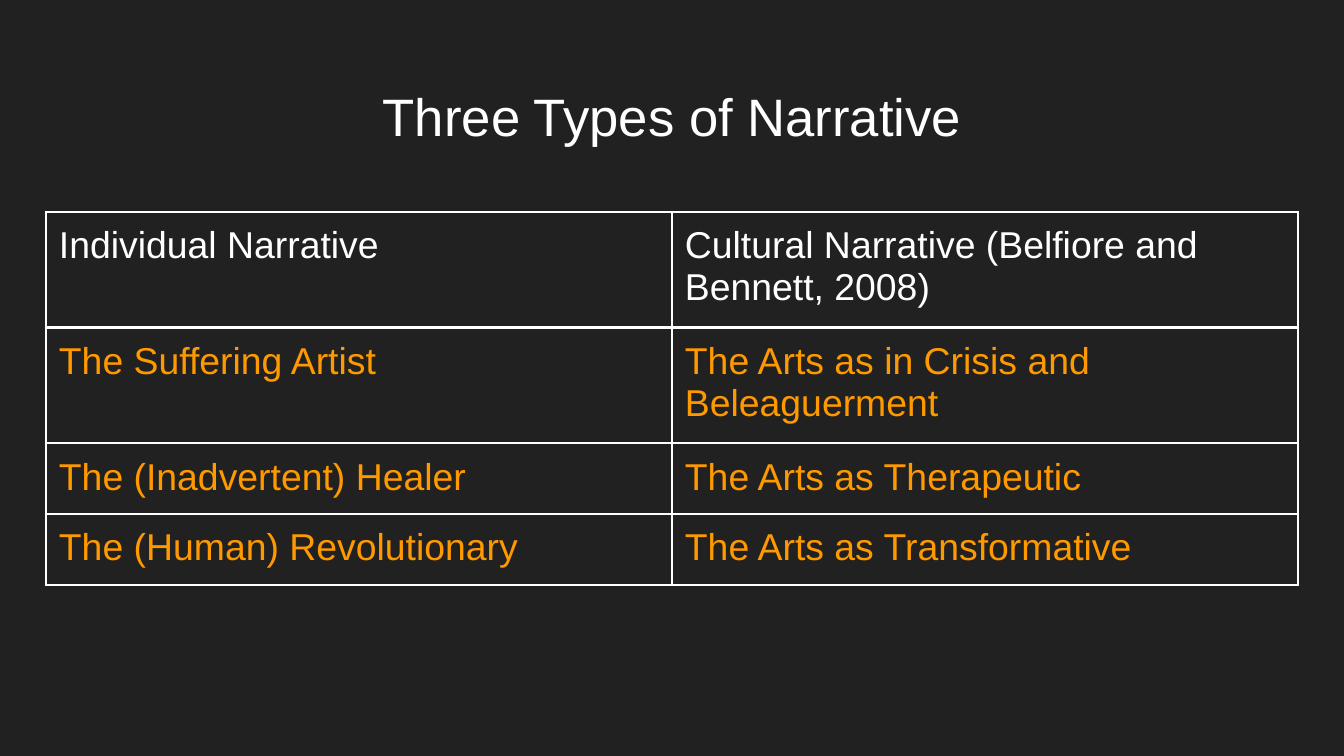
"""Build the slide "Three Types of Narrative" with a two-column table."""
from lxml import etree
from pptx import Presentation
from pptx.dml.color import RGBColor
from pptx.enum.text import MSO_ANCHOR, PP_ALIGN
from pptx.oxml.ns import qn
from pptx.util import Emu, Pt

PX = 914400 / 134.4
FONT = "Arial"
DARK = RGBColor(0x21, 0x21, 0x21)
WHITE = RGBColor(0xFF, 0xFF, 0xFF)
ORANGE = RGBColor(0xFF, 0x99, 0x00)
TOP = MSO_ANCHOR.TOP
CENTER = PP_ALIGN.CENTER
INSET = 13
BORDER = Pt(1.5)
ROWS = [
    ("Individual Narrative", "Cultural Narrative (Belfiore and Bennett, 2008)"),
    ("The Suffering Artist", "The Arts as in Crisis and Beleaguerment"),
    ("The (Inadvertent) Healer", "The Arts as Therapeutic"),
    ("The (Human) Revolutionary", "The Arts as Transformative"),
]
ROW_HEIGHTS = [110, 110, 69, 68]
COL_WIDTH = 626


def px(n):
    return Emu(round(n * PX))


def style(p, size, color):
    for r in p.runs:
        r.font.name = FONT
        r.font.size = Pt(size)
        r.font.bold = False
        r.font.color.rgb = color


prs = Presentation()
prs.slide_width, prs.slide_height = px(1344), px(756)
s = prs.slides.add_slide(prs.slide_layouts[6])
s.background.fill.solid()
s.background.fill.fore_color.rgb = DARK

sp = s.shapes.add_textbox(px(46), px(66), px(2 * COL_WIDTH), px(85))
tf = sp.text_frame
tf.word_wrap = True
tf.vertical_anchor = TOP
tf.margin_left = tf.margin_right = tf.margin_bottom = px(INSET)
tf.margin_top = px(18)
tf.text = "Three Types of Narrative"
p = tf.paragraphs[0]
p.alignment = CENTER
style(p, 28.2, WHITE)

table = s.shapes.add_table(len(ROWS), 2, px(46), px(212), px(2 * COL_WIDTH), px(sum(ROW_HEIGHTS))).table
table.first_row = table.horz_banding = False
for col in table.columns:
    col.width = px(COL_WIDTH)
for i, (texts, height) in enumerate(zip(ROWS, ROW_HEIGHTS)):
    table.rows[i].height = px(height)
    for j, text in enumerate(texts):
        cell = table.cell(i, j)
        cell.margin_left = cell.margin_right = cell.margin_top = cell.margin_bottom = px(INSET)
        cell.vertical_anchor = TOP
        cell.text_frame.text = text
        style(cell.text_frame.paragraphs[0], 20, ORANGE if i else WHITE)
        tc_pr = cell._tc.get_or_add_tcPr()
        for side in ("a:lnL", "a:lnR", "a:lnT", "a:lnB"):
            ln = etree.SubElement(tc_pr, qn(side), w=str(BORDER))
            fill = etree.SubElement(ln, qn("a:solidFill"))
            etree.SubElement(fill, qn("a:srgbClr"), val=str(WHITE))
        cell.fill.background()

prs.save("out.pptx")
